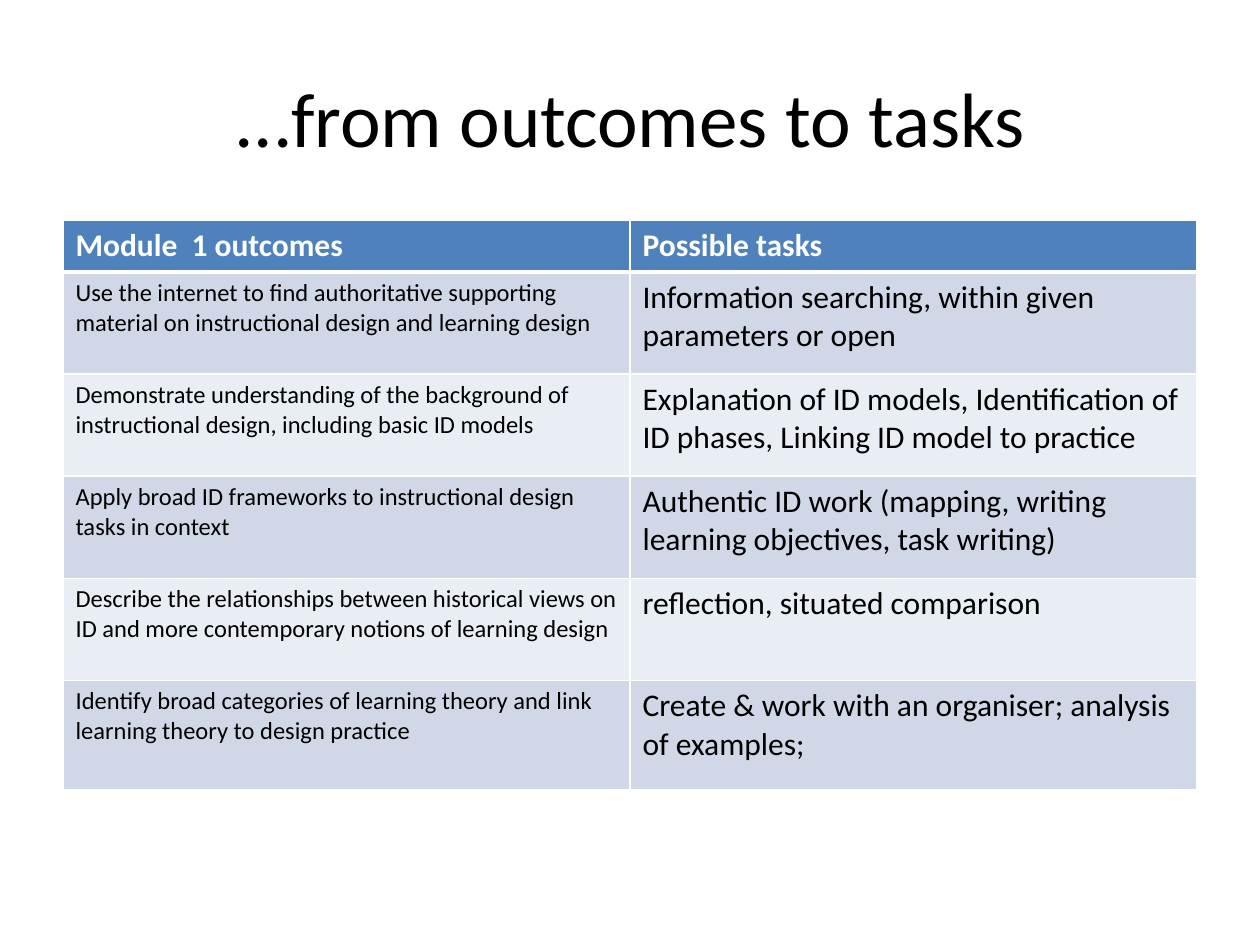
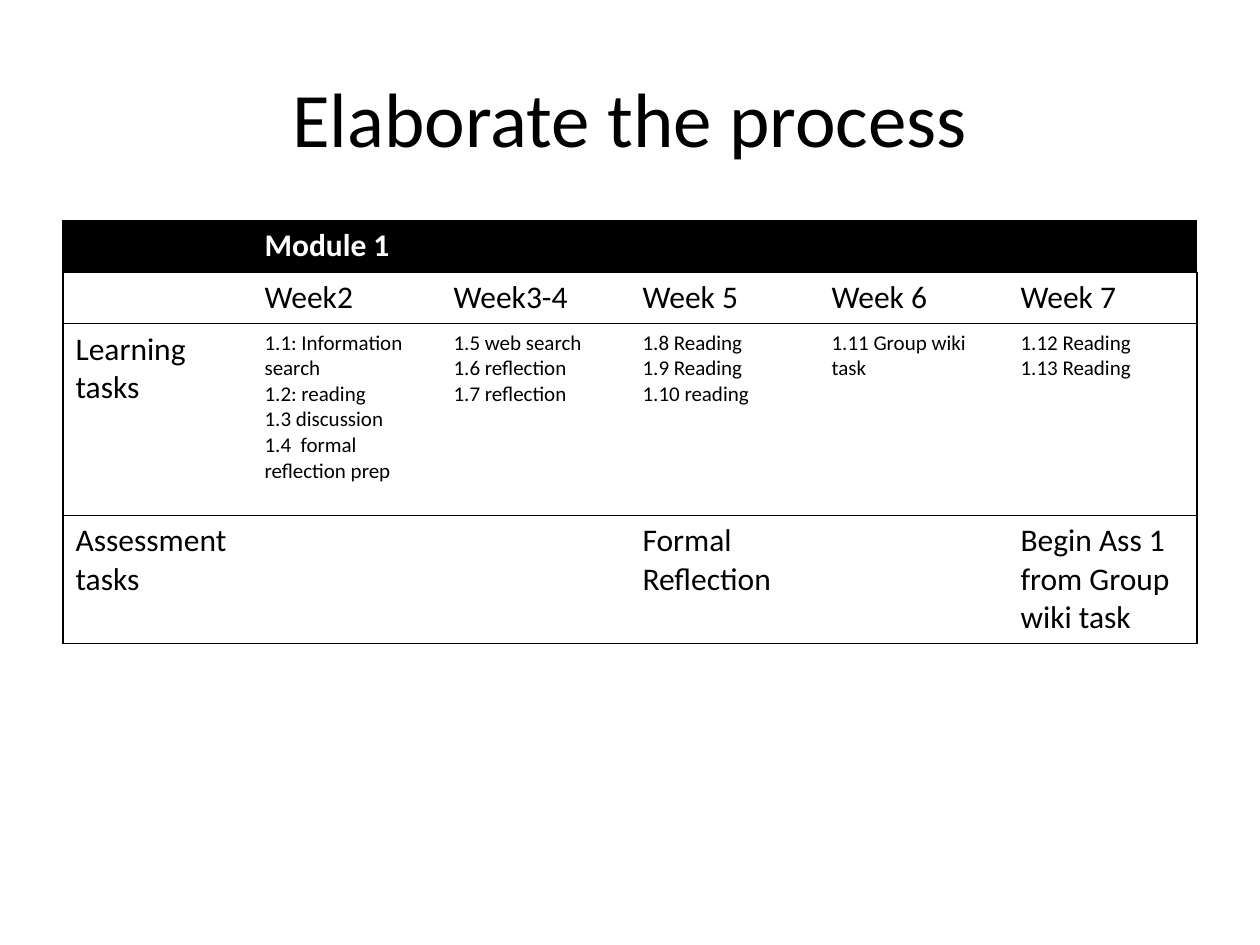
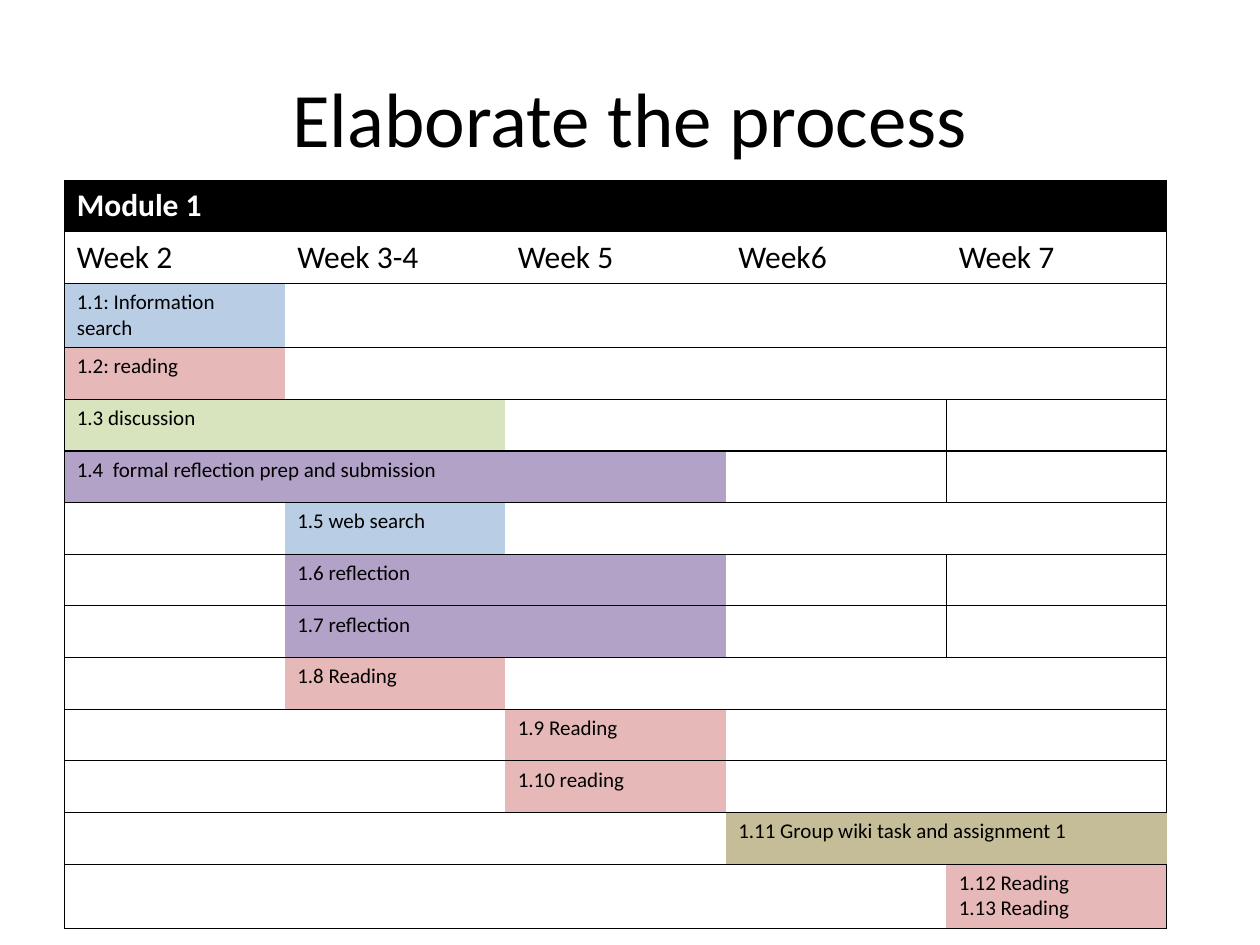
import dataclasses
import pptx
import pptx.util
import pptx.dml.color
import pptx.enum.text
import pptx.oxml.ns
import lxml.etree


@dataclasses.dataclass(frozen=True)
class Theme:
    font: str = "Calibri"
    black: str = "000000"
    white: str = "FFFFFF"
    header: str = "4F81BD"
    bands: tuple = ("D0D8E8", "E9EDF4")
    search: str = "B9CDE5"
    reading: str = "E6B9B8"
    discussion: str = "D7E4BD"
    reflection: str = "B3A2C7"
    group: str = "C4BD97"
    title: int = 44
    body: int = 18
    outcome: int = 14
    task: int = 12


theme = Theme()
PX = 9144


def write(frame, text, size=theme.body, colour=theme.black, bold=False, align=None):
    for index, line in enumerate(text.split("\n")):
        para = frame.paragraphs[0] if index == 0 else frame.add_paragraph()
        para.alignment = align
        span = para.add_run()
        span.text = line
        span.font.name = theme.font
        span.font.size = pptx.util.Pt(size)
        span.font.bold = bold
        span.font.color.rgb = pptx.dml.color.RGBColor.from_string(colour)


def dress(cell, fill, colour, left=0, right=0, top=0.75, bottom=0.75):
    properties = cell._tc.get_or_add_tcPr()
    for side, width in zip("LRTB", (left, right, top, bottom)):
        line = lxml.etree.SubElement(properties, pptx.oxml.ns.qn(f"a:ln{side}"))
        line.set("w", str(int(width * 12700)))
        kind = "a:solidFill" if width else "a:noFill"
        paint = lxml.etree.SubElement(line, pptx.oxml.ns.qn(kind))
        if width:
            lxml.etree.SubElement(paint, pptx.oxml.ns.qn("a:srgbClr"), val=colour)
    if fill:
        cell.fill.solid()
        cell.fill.fore_color.rgb = pptx.dml.color.RGBColor.from_string(fill)
    else:
        cell.fill.background()


deck = pptx.Presentation()
deck.slide_width = 1000 * PX
deck.slide_height = 750 * PX

layouts = [
    ("...from outcomes to tasks", 50, 175, 450, 2, [41, 81, 81, 81, 81, 87]),
    ("Elaborate the process", 50, 175, 150, 6, [41, 41, 152, 102]),
    ("Elaborate the process", 51, 143, 175, 5, [41, 41, 51] + [41] * 10 + [51]),
]
tables = []
for title, left, top, column_width, columns, heights in layouts:
    page = deck.slides.add_slide(deck.slide_layouts[5])
    box = page.shapes.title
    box.left, box.top, box.width, box.height = 50 * PX, 30 * PX, 900 * PX, 125 * PX
    box.text_frame.vertical_anchor = pptx.enum.text.MSO_ANCHOR.MIDDLE
    write(box.text_frame, title, size=theme.title, align=pptx.enum.text.PP_ALIGN.CENTER)
    table = page.shapes.add_table(
        len(heights), columns, left * PX, top * PX,
        column_width * columns * PX, sum(heights) * PX,
    ).table
    table.first_row = False
    table.horz_banding = False
    for column in table.columns:
        column.width = column_width * PX
    for row, height in zip(table.rows, heights):
        row.height = height * PX
    tables.append(table)

outcomes, schedule, timeline = tables

outcome_rows = [
    ("Module  1 outcomes", "Possible tasks"),
    ("Use the internet to find authoritative supporting material on instructional design and learning design",
     "Information searching, within given parameters or open"),
    ("Demonstrate understanding of the background of instructional design, including basic ID models",
     "Explanation of ID models, Identification of ID phases, Linking ID model to practice"),
    ("Apply broad ID frameworks to instructional design tasks in context",
     "Authentic ID work (mapping, writing learning objectives, task writing)"),
    ("Describe the relationships between historical views on ID and more contemporary notions of learning design",
     "reflection, situated comparison"),
    ("Identify broad categories of learning theory and link learning theory to design practice",
     "Create & work with an organiser; analysis of examples;"),
]
for r, texts in enumerate(outcome_rows):
    heading = r == 0
    for c, text in enumerate(texts):
        cell = outcomes.cell(r, c)
        dress(cell, theme.header if heading else theme.bands[(r - 1) % 2], theme.white,
              left=1, right=1, top=3 if r == 1 else 1, bottom=3 if heading else 1)
        write(cell.text_frame, text,
              size=theme.outcome if c == 0 and not heading else theme.body,
              colour=theme.white if heading else theme.black, bold=heading)

schedule_rows = [
    ("", "Module 1", "", "", "", ""),
    ("", "Week2", "Week3-4", "Week 5", "Week 6", "Week 7"),
    ("Learning tasks",
     "1.1: Information search\n1.2: reading\n1.3 discussion\n1.4  formal reflection prep",
     "1.5 web search\n1.6 reflection\n1.7 reflection",
     "1.8 Reading\n1.9 Reading\n1.10 reading",
     "1.11 Group wiki task",
     "1.12 Reading\n1.13 Reading"),
    ("Assessment tasks", "", "", "Formal\nReflection", "", "Begin Ass 1 from Group wiki task"),
]
schedule.cell(0, 1).merge(schedule.cell(0, 5))
for r, texts in enumerate(schedule_rows):
    heading = r == 0
    for c, text in enumerate(texts):
        cell = schedule.cell(r, c)
        dress(cell, theme.black if heading else None, theme.black,
              left=0.75 * (c == 0), right=0.75 * (c == 5))
        if text:
            write(cell.text_frame, text,
                  size=theme.task if r == 2 and c > 0 else theme.body,
                  colour=theme.white if heading else theme.black, bold=heading)

weeks = ["Week 2", "Week 3-4", "Week 5", "Week6", "Week 7"]
bars = [
    ("1.1: Information search", 0, 1, theme.search),
    ("1.2: reading", 0, 1, theme.reading),
    ("1.3 discussion", 0, 2, theme.discussion),
    ("1.4  formal reflection prep and submission", 0, 3, theme.reflection),
    ("1.5 web search", 1, 1, theme.search),
    ("1.6 reflection", 1, 2, theme.reflection),
    ("1.7 reflection", 1, 2, theme.reflection),
    ("1.8 Reading", 1, 1, theme.reading),
    ("1.9 Reading", 2, 1, theme.reading),
    ("1.10 reading", 2, 1, theme.reading),
    ("1.11 Group wiki task and assignment 1", 3, 2, theme.group),
    ("1.12 Reading\n1.13 Reading", 4, 1, theme.reading),
]
timeline.cell(0, 0).merge(timeline.cell(0, 4))
write(timeline.cell(0, 0).text_frame, "Module 1", colour=theme.white, bold=True)
for c, week in enumerate(weeks):
    write(timeline.cell(1, c).text_frame, week)
    for r, fill in enumerate((theme.black, None)):
        dress(timeline.cell(r, c), fill, theme.black,
              left=0.75 * (c == 0), right=0.75 * (c == 4))
for r, (text, start, length, colour) in enumerate(bars, 2):
    end = start + length
    divided = length > 1 and end < 5
    if length > 1:
        timeline.cell(r, start).merge(timeline.cell(r, end - 1))
    write(timeline.cell(r, start).text_frame, text, size=theme.task)
    for c in range(5):
        dress(timeline.cell(r, c), colour if start <= c < end else None, theme.black,
              left=0.75 * (c == 0 or divided and c == 4),
              right=0.75 * (c == 4 or divided and c == 3))

deck.save("out.pptx")
